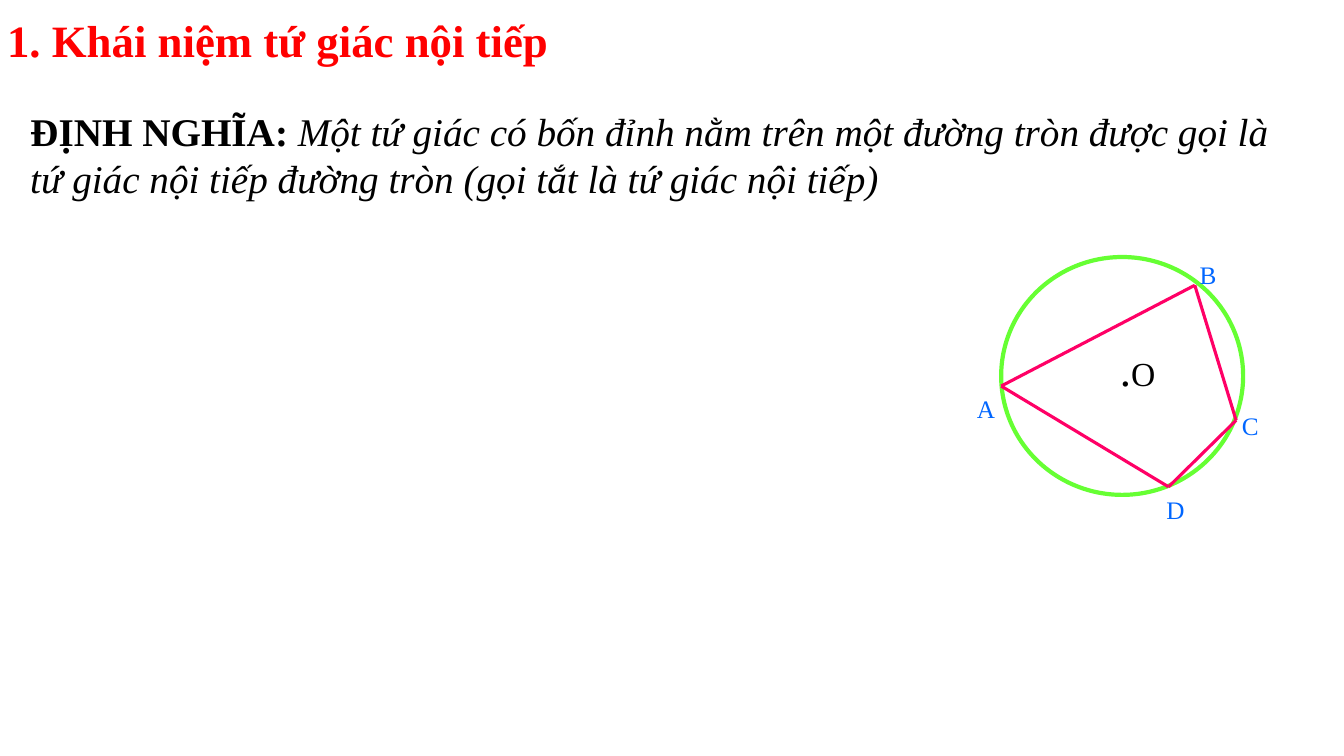
"""Build the slide that defines a cyclic quadrilateral, with its diagram."""
from dataclasses import dataclass

from lxml import etree
from pptx import Presentation
from pptx.dml.color import RGBColor
from pptx.enum.shapes import MSO_CONNECTOR, MSO_SHAPE
from pptx.enum.text import MSO_ANCHOR, MSO_AUTO_SIZE, PP_ALIGN
from pptx.oxml.ns import qn
from pptx.util import Pt

STRAIGHT = MSO_CONNECTOR.STRAIGHT
OVAL = MSO_SHAPE.OVAL
TOP, MIDDLE = MSO_ANCHOR.TOP, MSO_ANCHOR.MIDDLE
LEFT, JUSTIFY = PP_ALIGN.LEFT, PP_ALIGN.JUSTIFY
NO_RESIZE = MSO_AUTO_SIZE.NONE


@dataclass(frozen=True)
class Theme:
    font: str = "Times New Roman"
    heading: str = "FF0000"
    text: str = "000000"
    vertex: str = "0066FF"
    circle: str = "66FF33"
    side: str = "FF0066"
    paper: str = "FFFFFF"
    heading_size: int = 32
    body_size: int = 28
    center_size: int = 24
    vertex_size: int = 18


THEME = Theme()
EMU_PER_PX = 9144
SLIDE_SIZE = (1333, 750)

TITLE = [("1. Khái niệm tứ giác nội tiếp",
          {"size": THEME.heading_size, "color": THEME.heading, "bold": True})]
DEFINITION = [
    ("ĐỊNH NGHĨA: ", {"size": THEME.body_size, "color": THEME.text, "bold": True}),
    ("Một tứ giác có bốn đỉnh nằm trên một đường tròn được gọi là "
     "tứ giác nội tiếp đường tròn (gọi tắt là tứ giác nội tiếp)",
     {"size": THEME.body_size, "color": THEME.text, "bold": False, "italic": True}),
]
CENTER = [(".", {"size": THEME.heading_size, "color": THEME.text}),
          ("O", {"size": THEME.center_size, "color": THEME.text})]

TITLE_BOX = (-3, 7, 1288, 64)
DEFINITION_BOX = (20, 101, 1265, 104)
CENTER_BOX = (1101, 333, 72, 66)
CIRCLE_BOX = (993, 255, 240, 236)
LABEL_SIZE = (50, 40)
VERTICES = {
    "A": {"point": (993, 383), "label": (959, 385)},
    "B": {"point": (1185, 283), "label": (1180, 252)},
    "C": {"point": (1226, 417), "label": (1222, 402)},
    "D": {"point": (1159, 483), "label": (1147, 485)},
}


def emu(lengths):
    return [length * EMU_PER_PX for length in lengths]


def place(shape, box):
    for name, value in zip(("left", "top", "width", "height"), emu(box)):
        setattr(shape, name, value)


def write(shape, runs, align=LEFT, anchor=TOP):
    frame = shape.text_frame
    settings = {"word_wrap": True, "auto_size": NO_RESIZE, "vertical_anchor": anchor}
    for name, value in settings.items():
        setattr(frame, name, value)
    paragraph = frame.paragraphs[0]
    paragraph.alignment = align
    paragraph.space_before = Pt(0)
    for text, style in runs:
        run = paragraph.add_run()
        run.text = text
        run.font.color.rgb = RGBColor.from_string(style["color"])
        formats = {**style, "name": THEME.font, "size": Pt(style["size"])}
        del formats["color"]
        for name, value in formats.items():
            setattr(run.font, name, value)


def stroke(line, color, width):
    line.color.rgb = RGBColor.from_string(color)
    line.width = Pt(width)


def add_text(slide, box, runs, anchor=TOP):
    write(slide.shapes.add_textbox(*emu(box)), runs, anchor=anchor)


def add_headings(slide):
    title, definition = slide.placeholders
    place(title, TITLE_BOX)
    title.fill.solid()
    title.fill.fore_color.rgb = RGBColor.from_string(THEME.paper)
    stroke(title.line, THEME.paper, 0.75)
    write(title, TITLE, JUSTIFY, MIDDLE)

    place(definition, DEFINITION_BOX)
    properties = definition.text_frame.paragraphs[0]._p.get_or_add_pPr()
    for name in ("marL", "indent"):
        properties.set(name, "0")
    etree.SubElement(properties, qn("a:buNone"))
    write(definition, DEFINITION)


def add_diagram(slide):
    add_text(slide, CENTER_BOX, CENTER, MIDDLE)
    circle = slide.shapes.add_shape(OVAL, *emu(CIRCLE_BOX))
    circle.shadow.inherit = False
    circle.fill.background()
    stroke(circle.line, THEME.circle, 3)

    points = [vertex["point"] for vertex in VERTICES.values()]
    for start, end in zip(points, points[1:] + points[:1]):
        side = slide.shapes.add_connector(STRAIGHT, *emu(start + end))
        stroke(side.line, THEME.side, 2.25)
        etree.SubElement(side._element.spPr, qn("a:effectLst"))

    style = {"size": THEME.vertex_size, "color": THEME.vertex}
    for letter, vertex in VERTICES.items():
        add_text(slide, vertex["label"] + LABEL_SIZE, [(letter, style)])


def main():
    presentation = Presentation()
    presentation.slide_width, presentation.slide_height = emu(SLIDE_SIZE)
    slide = presentation.slides.add_slide(presentation.slide_layouts[1])
    add_headings(slide)
    add_diagram(slide)
    presentation.save("out.pptx")


if __name__ == "__main__":
    main()
